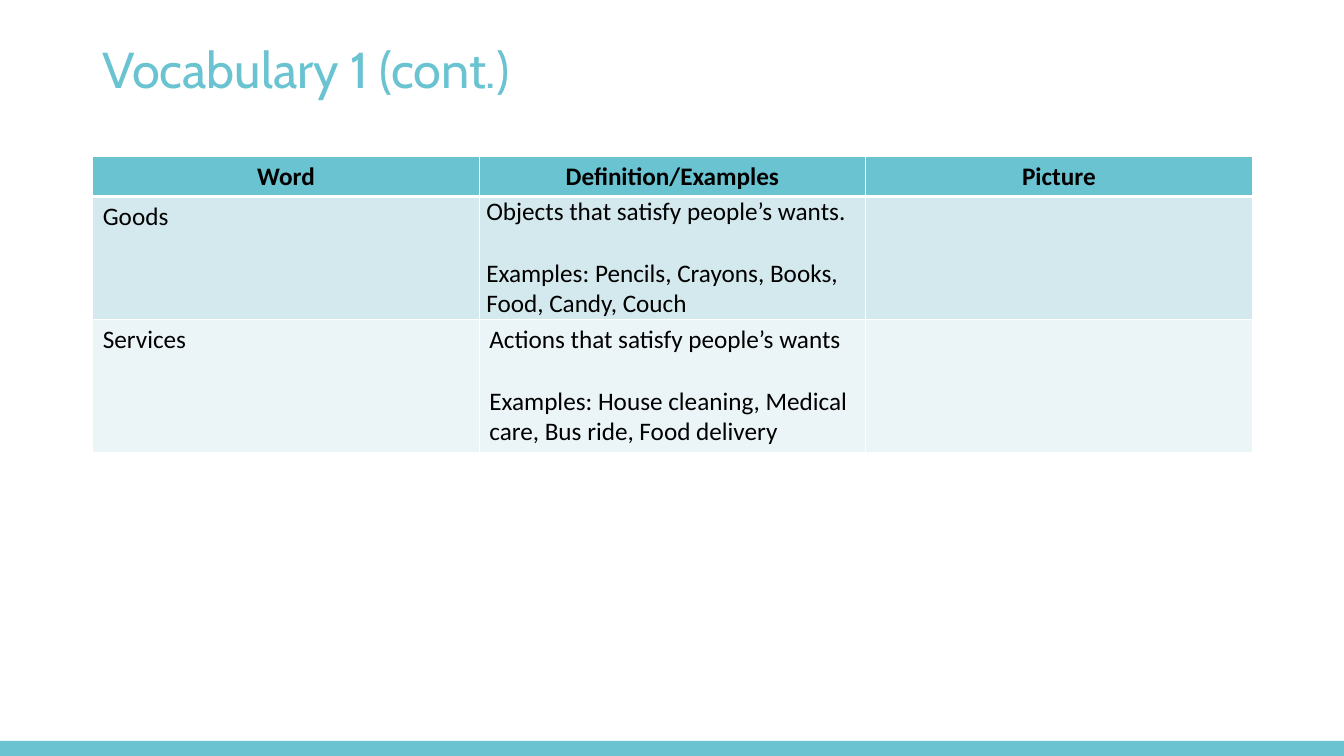
from dataclasses import dataclass

from lxml import etree
from pptx import Presentation
from pptx.dml.color import RGBColor
from pptx.enum.shapes import MSO_SHAPE
from pptx.enum.text import MSO_ANCHOR, PP_ALIGN
from pptx.oxml.ns import qn
from pptx.util import Inches, Pt

RECTANGLE = MSO_SHAPE.RECTANGLE
LEFT, CENTER = PP_ALIGN.LEFT, PP_ALIGN.CENTER
MIDDLE = MSO_ANCHOR.MIDDLE


@dataclass(frozen=True)
class Theme:
    accent: str = "69C3D1"
    goods_band: str = "D4E9EE"
    services_band: str = "EBF5F7"
    rule: str = "FFFFFF"
    ink: str = "000000"
    title_font: str = "Cabin"
    body_font: str = "Calibri"
    title_size: int = 36
    body_size: int = 18
    paragraph_gap: int = 22


THEME = Theme()

HEADINGS = ["Word", "Definition/Examples", "Picture"]
VOCABULARY = [
    ["Goods",
     ["Objects that satisfy people’s wants.",
      "Examples: Pencils, Crayons, Books, Food, Candy, Couch"],
     ""],
    ["Services",
     ["Actions that satisfy people’s wants",
      "Examples: House cleaning, Medical care, Bus ride, Food delivery"],
     ""],
]
ROW_HEIGHTS = [0.4, 1.22, 1.32]
COLUMN_WIDTH = 11.5 / len(HEADINGS)


def write_text(frame, text, font=THEME.body_font, size=THEME.body_size,
               color=THEME.ink, bold=False, align=LEFT, line_spacing=None):
    """Write a string, or a list of spaced paragraphs, into a text frame."""
    frame.word_wrap = True
    lines = [text] if isinstance(text, str) else text
    for index, line in enumerate(lines):
        paragraph = frame.add_paragraph() if index else frame.paragraphs[0]
        paragraph.text = line
        paragraph.alignment = align
        paragraph.line_spacing = line_spacing
        if index:
            paragraph.space_before = Pt(THEME.paragraph_gap)
        paragraph.font.name = font
        paragraph.font.size = Pt(size)
        paragraph.font.bold = bold
        paragraph.font.color.rgb = RGBColor.from_string(color)


def add_footer_band(slide):
    band = slide.shapes.add_shape(
        RECTANGLE, Inches(0), Inches(7.35), Inches(13.33), Inches(0.15))
    band.shadow.inherit = False
    band.fill.solid()
    band.fill.fore_color.rgb = RGBColor.from_string(THEME.accent)
    band.line.fill.background()


def add_title(slide, text):
    title = slide.shapes.add_textbox(
        Inches(0.92), Inches(0.39), Inches(11.5), Inches(0.66))
    title.text_frame.vertical_anchor = MIDDLE
    write_text(title.text_frame, text, font=THEME.title_font,
               size=THEME.title_size, color=THEME.accent, line_spacing=0.9)


def style_cell(cell, fill, top=1, bottom=1):
    """Draw the cell's white rules, then its fill."""
    properties = cell._tc.get_or_add_tcPr()
    for side, width in (("L", 1), ("R", 1), ("T", top), ("B", bottom)):
        rule = etree.SubElement(properties, qn(f"a:ln{side}"), w=str(Pt(width)))
        solid = etree.SubElement(rule, qn("a:solidFill"))
        etree.SubElement(solid, qn("a:srgbClr"), val=THEME.rule)
    cell.fill.solid()
    cell.fill.fore_color.rgb = RGBColor.from_string(fill)


def add_vocabulary_table(slide):
    rows = [HEADINGS] + VOCABULARY
    fills = [THEME.accent, THEME.goods_band, THEME.services_band]
    table = slide.shapes.add_table(
        len(rows), len(HEADINGS), Inches(0.92), Inches(1.55),
        Inches(11.5), Inches(sum(ROW_HEIGHTS))).table
    for column in table.columns:
        column.width = Inches(COLUMN_WIDTH)
    for r, (words, fill, height) in enumerate(zip(rows, fills, ROW_HEIGHTS)):
        table.rows[r].height = Inches(height)
        heading = r == 0
        for c, words_in_cell in enumerate(words):
            cell = table.cell(r, c)
            style_cell(cell, fill, top=3 if r == 1 else 1,
                       bottom=3 if heading else 1)
            write_text(cell.text_frame, words_in_cell, bold=heading,
                       align=CENTER if heading else LEFT)

    # The goods definition sits tight in its cell
    goods_definition = table.cell(1, 1)
    goods_definition.margin_left = goods_definition.margin_right = Inches(0.07)
    goods_definition.margin_top = goods_definition.margin_bottom = Inches(0)


def main():
    presentation = Presentation()
    presentation.slide_width = Inches(13.33)
    presentation.slide_height = Inches(7.5)
    slide = presentation.slides.add_slide(presentation.slide_layouts[6])

    add_footer_band(slide)
    add_title(slide, "Vocabulary 1 (cont.)")
    add_vocabulary_table(slide)

    presentation.save("out.pptx")


if __name__ == "__main__":
    main()
